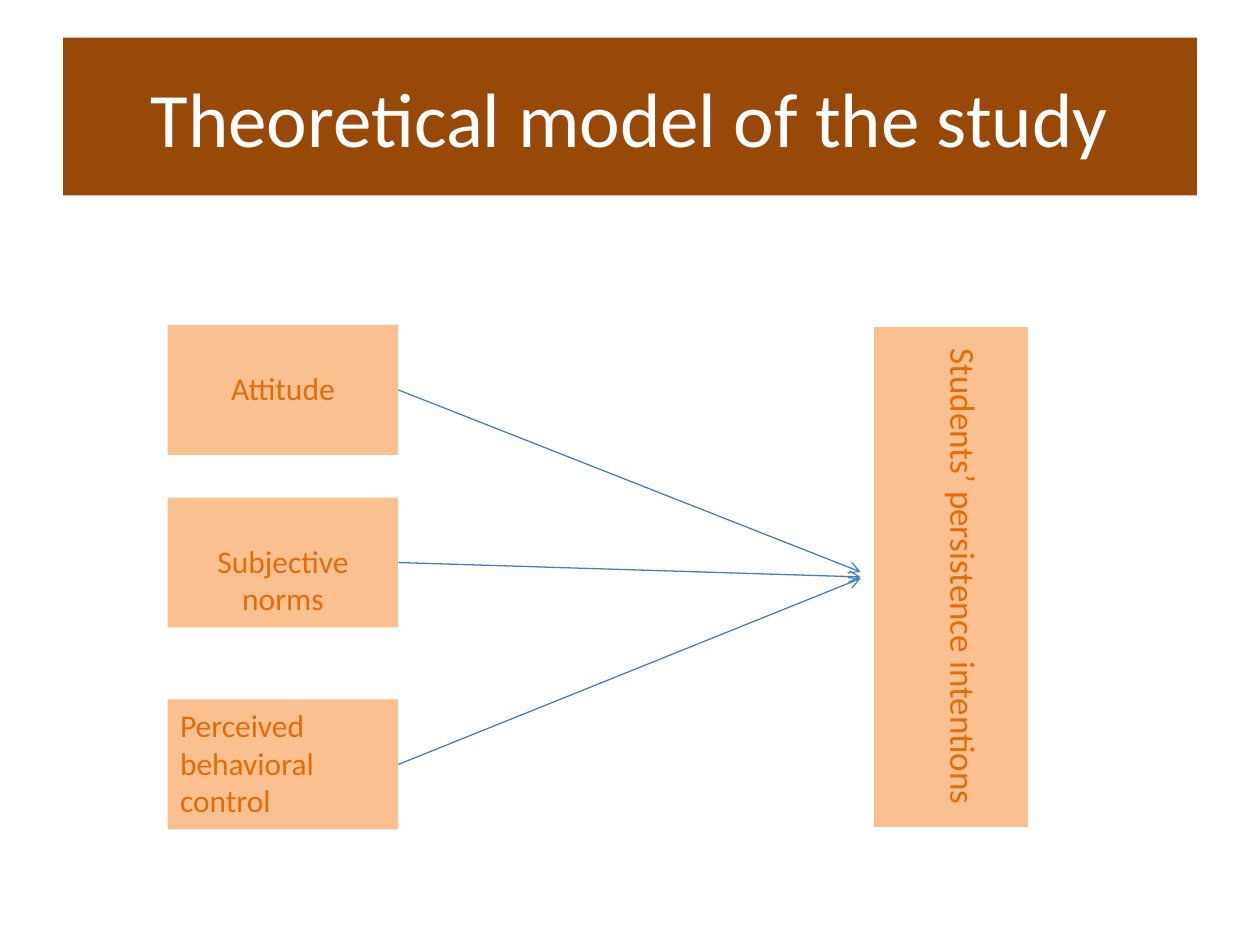
from pptx import Presentation
from pptx.dml.color import RGBColor
from pptx.enum.shapes import MSO_CONNECTOR, MSO_SHAPE
from pptx.enum.text import MSO_ANCHOR, PP_ALIGN
from pptx.oxml.ns import qn
from pptx.util import Cm, Pt
from lxml.etree import SubElement

FONT = "Calibri"
BROWN = "984807"
PEACH = "FAC090"
ORANGE = "E46C0A"
BLUE = "4B7EBC"
WHITE = "FFFFFF"

FACTOR_LEFT, FACTOR_WIDTH, FACTOR_HEIGHT = 3.38, 4.65, 2.62
ARROW_END = 17.35
FACTORS = [
    ("Attitude", 6.55, 0.89, PP_ALIGN.CENTER, 11.53),
    ("Subjective norms", 10.03, 0.89, PP_ALIGN.CENTER, 11.63),
    ("Perceived behavioral control", 14.1, 0.13, PP_ALIGN.LEFT, 11.66),
]


def color(value):
    return RGBColor.from_string(value)


def fill(shape, value):
    shape.fill.solid()
    shape.fill.fore_color.rgb = color(value)


def write(shape, text, size, text_color, align, anchor=MSO_ANCHOR.TOP):
    frame = shape.text_frame
    frame.text = text
    frame.word_wrap = True
    frame.vertical_anchor = anchor
    para = frame.paragraphs[0]
    para.alignment = align
    font = para.runs[0].font
    font.name = FONT
    font.size = Pt(size)
    font.color.rgb = color(text_color)


def add_title(slide, text):
    title = slide.shapes.title
    title.left, title.top = Cm(1.27), Cm(0.76)
    title.width, title.height = Cm(22.86), Cm(3.18)
    fill(title, BROWN)
    write(title, text, 44, WHITE, PP_ALIGN.CENTER, MSO_ANCHOR.MIDDLE)


def add_box(slide, left, top, width, height):
    box = slide.shapes.add_shape(
        MSO_SHAPE.RECTANGLE, Cm(left), Cm(top), Cm(width), Cm(height)
    )
    box.shadow.inherit = False
    fill(box, PEACH)
    box.line.fill.background()
    return box


def add_factor(slide, text, top, inset, align):
    box = add_box(slide, FACTOR_LEFT, top, FACTOR_WIDTH, FACTOR_HEIGHT)
    write(box, text, 18, ORANGE, align)
    box.text_frame.margin_top = Cm(inset)
    return box


def add_outcome(slide, text):
    box = add_box(slide, 17.58, 6.55, 3.18, 10.16)
    box.line.color.rgb = color(WHITE)
    box.line.width = Pt(2)
    label = slide.shapes.add_textbox(Cm(18.62), Cm(6.78), Cm(1.37), Cm(9.96))
    write(label, text, 20, ORANGE, PP_ALIGN.LEFT)
    label.text_frame._txBody.bodyPr.set("vert", "vert")


def add_arrow(slide, factor, end_y):
    arrow = slide.shapes.add_connector(
        MSO_CONNECTOR.STRAIGHT,
        factor.left + factor.width,
        factor.top + factor.height // 2,
        Cm(ARROW_END),
        Cm(end_y),
    )
    arrow.begin_connect(factor, 3)
    arrow.line.color.rgb = color(BLUE)
    arrow.line.width = Pt(0.75)
    SubElement(arrow.line._get_or_add_ln(), qn("a:tailEnd"), type="arrow")
    SubElement(arrow._element.spPr, qn("a:effectLst"))


def main():
    deck = Presentation()
    deck.slide_width, deck.slide_height = Cm(25.4), Cm(19.05)
    slide = deck.slides.add_slide(deck.slide_layouts[5])
    add_title(slide, "Theoretical model of the study")
    add_outcome(slide, "Students’ persistence intentions")
    for text, top, inset, align, end_y in FACTORS:
        factor = add_factor(slide, text, top, inset, align)
        add_arrow(slide, factor, end_y)
    deck.save("out.pptx")


if __name__ == "__main__":
    main()
